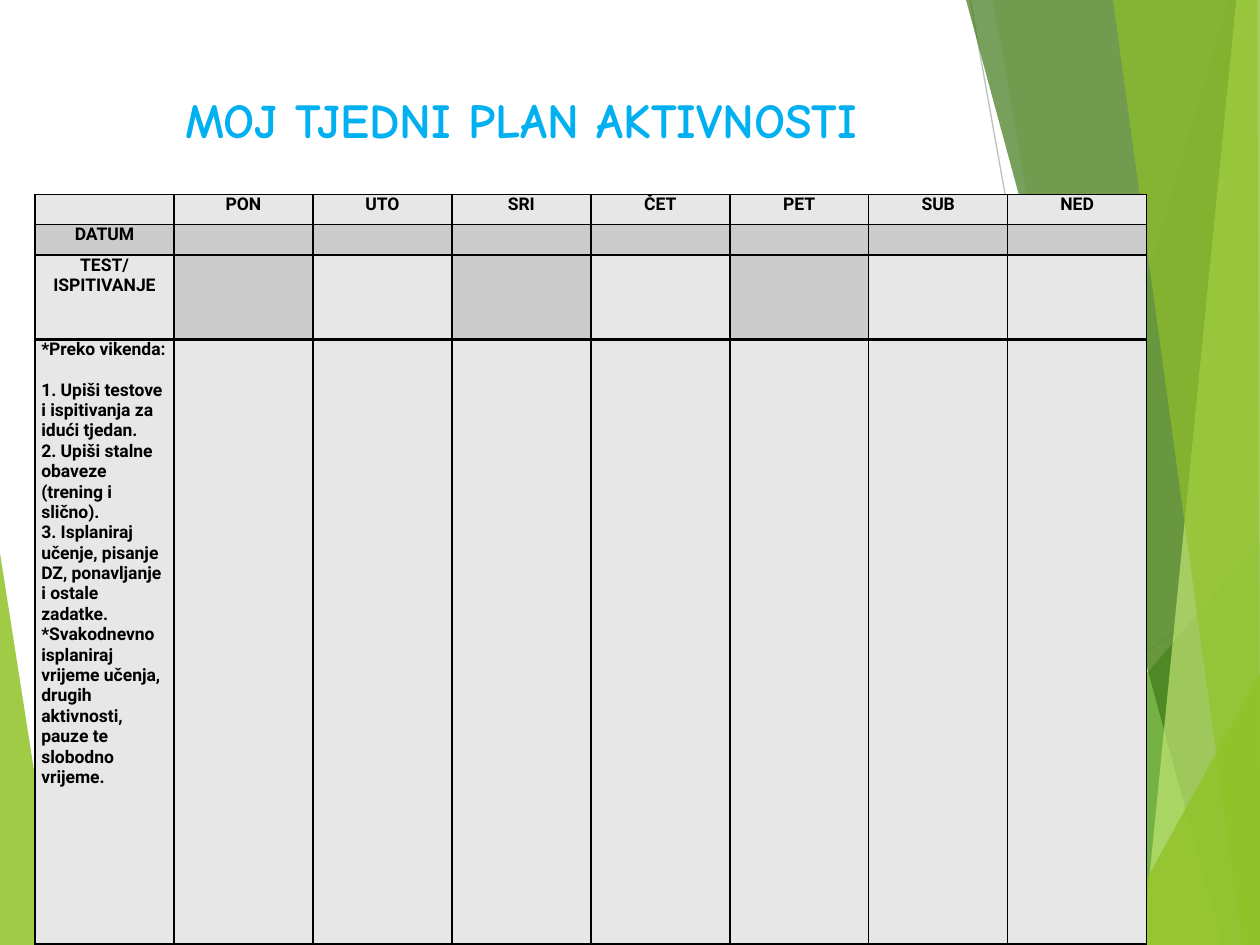
from lxml import etree
from pptx import Presentation
from pptx import util as u
from pptx.dml.color import RGBColor
from pptx.enum import shapes, text
from pptx.oxml.ns import qn

LIGHT, DARK, BLACK = "E7E7E7", "CCCCCC", "000000"
DAYS = ["PON", "UTO", "SRI", "ČET", "PET", "SUB", "NED"]
INSTRUCTIONS = [
    "*Preko vikenda:",
    "1. Upiši testove i ispitivanja za idući tjedan.",
    "2. Upiši stalne obaveze (trening i slično).",
    "3. Isplaniraj učenje, pisanje DZ, ponavljanje i ostale zadatke.",
    "*Svakodnevno isplaniraj vrijeme učenja, drugih aktivnosti, pauze te slobodno vrijeme.",
]
ROW_HEIGHTS = [17.4, 17.4, 48, 345.6]
COLUMN_WIDTH = 79.4
LEFT_FACET = ([(0, 316), (35, 540), (0, 540)], "90C226", 85)
RAYS = [((404, 540), (720, 329), "D9D9D9"), ((554.5, 0), (651, 540), "BFBFBF")]
RIGHT_FACETS = [
    ([(702, 0), (543, 540), (720, 540), (720, 0)], "90C226", 30),
    ([(567.5, 0), (661.5, 540), (720, 540), (720, 0)], "90C226", 20),
    ([(523, 540), (720, 309), (720, 540)], "54A021", 72),
    ([(552, 0), (698.5, 540), (720, 540), (720, 0)], "3F7819", 70),
    ([(706.5, 0), (653, 540), (720, 540), (720, 0)], "C0E474", 70),
    ([(636, 0), (710, 540), (720, 540), (718.5, 0)], "90C226", 65),
    ([(634.5, 540), (720, 385), (720, 540)], "90C226", 80),
]


def color(value):
    """Return the colour of a hex string."""
    return RGBColor.from_string(value)


def add_facet(slide, corners, fill, opacity):
    """Draw a translucent polygon."""
    points = [(u.Pt(x), u.Pt(y)) for x, y in corners]
    builder = slide.shapes.build_freeform(*points[0])
    builder.add_line_segments(points[1:], close=True)
    facet = builder.convert_to_shape()
    facet.shadow.inherit = False
    facet.line.fill.background()
    facet.fill.solid()
    facet.fill.fore_color.rgb = color(fill)
    tint = facet.fill._xPr.find(".//" + qn("a:srgbClr"))
    etree.SubElement(tint, qn("a:alpha")).set("val", str(opacity * 1000))


def add_ray(slide, start, end, stroke):
    """Draw a thin straight line."""
    ends = [u.Pt(value) for value in start + end]
    ray = slide.shapes.add_connector(shapes.MSO_CONNECTOR.STRAIGHT, *ends)
    ray.line.color.rgb = color(stroke)
    ray.line.width = u.Pt(0.75)
    etree.SubElement(ray._element.spPr, qn("a:effectLst"))


def write(frame, lines, size=10, font="Roboto", ink=BLACK, align="CENTER", first_gap=0):
    """Fill a text frame with bold paragraphs."""
    for index, line in enumerate(lines):
        paragraph = frame.add_paragraph() if index else frame.paragraphs[0]
        paragraph.alignment = text.PP_ALIGN[align]
        if first_gap and index == 0:
            paragraph.space_after = u.Pt(first_gap)
        run = paragraph.add_run()
        run.text = line
        run.font.size, run.font.name, run.font.bold = u.Pt(size), font, True
        run.font.color.rgb = color(ink)


def add_title(slide, title):
    """Place the slide heading."""
    box = slide.shapes.add_textbox(u.Pt(48), u.Pt(48), u.Pt(500), u.Pt(104))
    box.text_frame.word_wrap = True
    box.text_frame.vertical_anchor = text.MSO_ANCHOR.TOP
    write(box.text_frame, [title], size=27.9, font="Comic Neue", ink="00B0F0")


def style_cell(cell, fill, top=1, bottom=1):
    """Set the borders, fill and margins of a cell."""
    properties = cell._tc.get_or_add_tcPr()
    for side, width in (("L", 1), ("R", 1), ("T", top), ("B", bottom)):
        border = etree.SubElement(properties, qn("a:ln" + side), w=str(u.Pt(width)))
        paint = etree.SubElement(border, qn("a:solidFill"))
        etree.SubElement(paint, qn("a:srgbClr"), val=BLACK)
    cell.fill.solid()
    cell.fill.fore_color.rgb = color(fill)
    cell.margin_left = cell.margin_right = u.Pt(3.6)
    cell.margin_top = cell.margin_bottom = 0


def add_planner(slide):
    """Build the weekly planner table."""
    columns = len(DAYS) + 1
    planner = slide.shapes.add_table(
        len(ROW_HEIGHTS), columns, u.Pt(20), u.Pt(111),
        u.Pt(COLUMN_WIDTH * columns), u.Pt(sum(ROW_HEIGHTS))).table
    planner.horz_banding = planner.first_row = False
    for column in planner.columns:
        column.width = u.Pt(COLUMN_WIDTH)
    fills = [[LIGHT] * columns, [DARK] * columns,
             [DARK if day in (1, 3, 5) else LIGHT for day in range(columns)],
             [LIGHT] * columns]
    for index, (height, row_fills) in enumerate(zip(ROW_HEIGHTS, fills)):
        planner.rows[index].height = u.Pt(height)
        for cell, fill in zip(planner.rows[index].cells, row_fills):
            style_cell(cell, fill, top=2 if index == 3 else 1, bottom=2 if index == 2 else 1)
            ending = cell.text_frame.paragraphs[0]._p.get_or_add_endParaRPr()
            ending.set("sz", "1000")
    for index, day in enumerate(DAYS, 1):
        write(planner.cell(0, index).text_frame, [day])
    write(planner.cell(1, 0).text_frame, ["DATUM"])
    write(planner.cell(2, 0).text_frame, ["TEST/", "ISPITIVANJE"])
    write(planner.cell(3, 0).text_frame, INSTRUCTIONS, align="LEFT", first_gap=11.7)


def main():
    """Build and save the weekly plan slide."""
    deck = Presentation()
    deck.slide_width, deck.slide_height = u.Pt(720), u.Pt(540)
    slide = deck.slides.add_slide(deck.slide_layouts[6])
    add_facet(slide, *LEFT_FACET)
    for ray in RAYS:
        add_ray(slide, *ray)
    for facet in RIGHT_FACETS:
        add_facet(slide, *facet)
    add_title(slide, "MOJ TJEDNI PLAN AKTIVNOSTI")
    add_planner(slide)
    deck.save("out.pptx")


if __name__ == "__main__":
    main()
